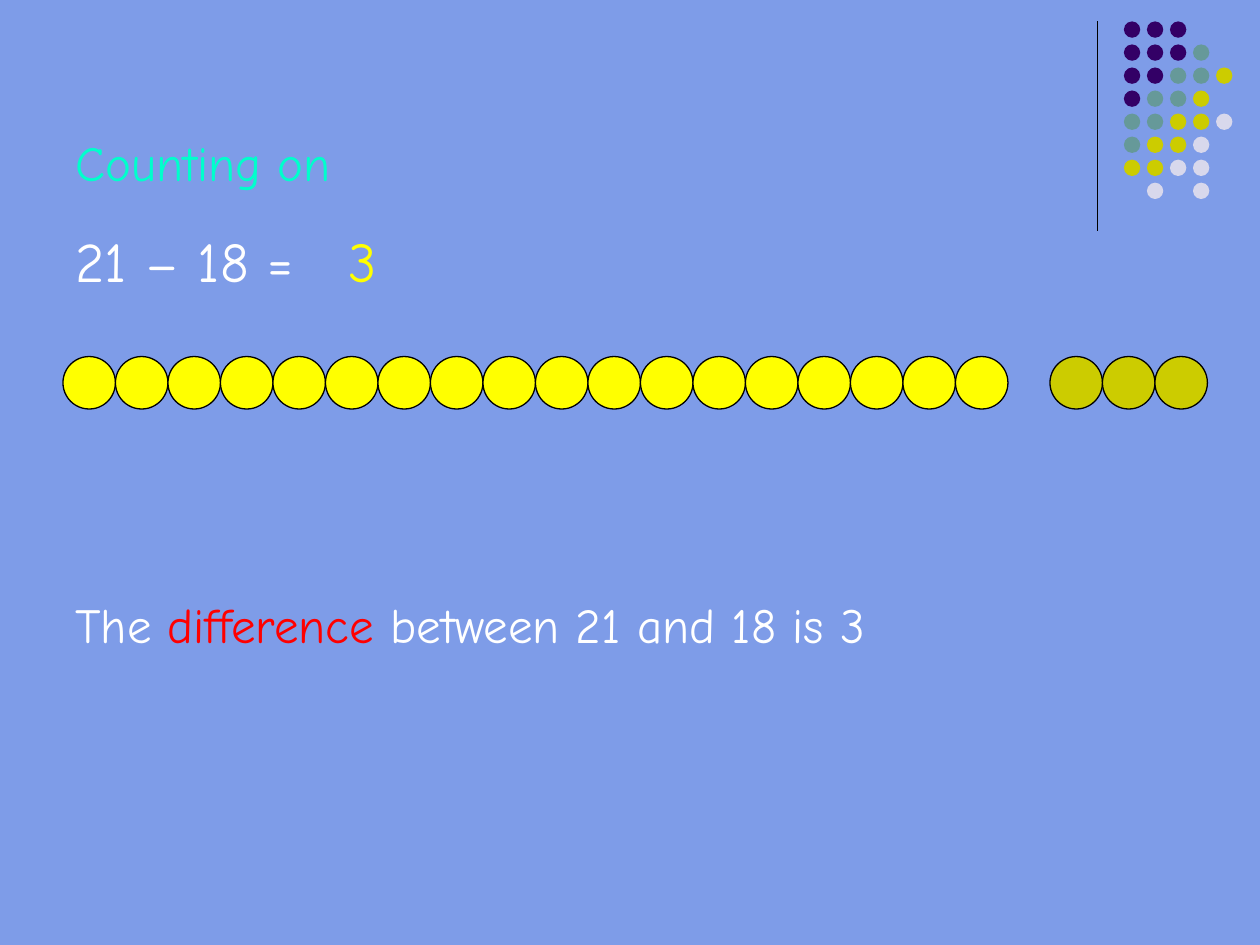
import pptx
import pptx.dml.color
import pptx.enum.shapes
import pptx.enum.text
import pptx.oxml
import pptx.util

RGBColor = pptx.dml.color.RGBColor
BACKGROUND = RGBColor(0x7E, 0x9C, 0xE8)
BLACK = RGBColor(0x00, 0x00, 0x00)
WHITE = RGBColor(0xFF, 0xFF, 0xFF)
YELLOW = RGBColor(0xFF, 0xFF, 0x00)
OLIVE = RGBColor(0xCC, 0xCC, 0x00)
RED = RGBColor(0xFF, 0x00, 0x00)
MINT = RGBColor(0x00, 0xFF, 0xCC)
PURPLE = RGBColor(0x33, 0x00, 0x66)
TEAL = RGBColor(0x66, 0x99, 0x99)
PALE = RGBColor(0xD8, 0xD8, 0xEC)

FONT = "Comic Neue"
WIDTH, HEIGHT = 10, 7.5
MARGIN = WIDTH / 20

# Text runs, then left, top, width, height in inches and size in points
HEADING = ([("Counting on", MINT)], (MARGIN, 1, 3.33, 0.57), 28)
STATEMENTS = [
    ([("21 – 18 =", WHITE)], (MARGIN, 1.75, 3.25, 1.43), 32),
    ([("The ", WHITE), ("difference", RED), (" between 21 and 18 is 3", WHITE)],
     (MARGIN, 4.67, 8.83, 0.57), 28),
    ([("3", YELLOW)], (2.67, 1.75, 0.92, 0.63), 32),
]

# A bead is one of 24 columns wide: count, left edge, colour
BEAD = WIDTH / 24
BEAD_TOP = 2.83
BEAD_GROUPS = [(18, MARGIN, YELLOW), (3, 20 * BEAD, OLIVE)]

# Corner ornament, one letter a dot
DOT_ROWS = ["PPP", "PPPT", "PPTTO", "PTTO", "TTOOL", "TOOL", "OOLL", " L L"]
DOT_COLOURS = {"P": PURPLE, "T": TEAL, "O": OLIVE, "L": PALE}
DOT = 0.13
DOT_LEFT, DOT_TOP, DOT_BOTTOM = 8.92, 0.17, 1.45
DOT_PITCH = (DOT_BOTTOM - DOT_TOP) / (len(DOT_ROWS) - 1)
RULE_LEFT, RULE_BOTTOM = 8.71, 1.83

FRAME_FORMAT = {
    "word_wrap": True,
    "auto_size": pptx.enum.text.MSO_AUTO_SIZE.NONE,
    "vertical_anchor": pptx.enum.text.MSO_ANCHOR.TOP,
}


def inches(*lengths):
    return [pptx.util.Inches(length) for length in lengths]


def add_circle(slide, left, top, diameter, colour, outlined=False):
    circle = slide.shapes.add_shape(
        pptx.enum.shapes.MSO_SHAPE.OVAL, *inches(left, top, diameter, diameter))
    circle.shadow.inherit = False
    circle.fill.solid()
    circle.fill.fore_color.rgb = colour
    if outlined:
        circle.line.color.rgb = BLACK
        circle.line.width = pptx.util.Pt(0.75)
    else:
        circle.line.fill.background()


def write_text(holder, runs, size):
    frame = holder.text_frame
    for name, value in FRAME_FORMAT.items():
        setattr(frame, name, value)
    paragraph = frame.paragraphs[0]
    paragraph.alignment = pptx.enum.text.PP_ALIGN.LEFT
    for words, colour in runs:
        run = paragraph.add_run()
        run.text = words
        run.font.name = FONT
        run.font.size = pptx.util.Pt(size)
        run.font.color.rgb = colour


def add_ornament(slide):
    rule = slide.shapes.add_connector(
        pptx.enum.shapes.MSO_CONNECTOR.STRAIGHT,
        *inches(RULE_LEFT, DOT_TOP, RULE_LEFT, RULE_BOTTOM))
    rule.line.color.rgb = BLACK
    rule.line.width = pptx.util.Pt(0.75)
    properties = rule._element.spPr
    properties.append(properties.makeelement(pptx.oxml.ns.qn("a:effectLst"), {}))
    for row, letters in enumerate(DOT_ROWS):
        for column, letter in enumerate(letters):
            if letter in DOT_COLOURS:
                add_circle(slide, DOT_LEFT + column * DOT_PITCH,
                           DOT_TOP + row * DOT_PITCH, DOT, DOT_COLOURS[letter])


def main():
    deck = pptx.Presentation()
    deck.slide_width, deck.slide_height = inches(WIDTH, HEIGHT)
    slide = deck.slides.add_slide(deck.slide_layouts.get_by_name("Title Only"))
    slide.background.fill.solid()
    slide.background.fill.fore_color.rgb = BACKGROUND

    add_ornament(slide)
    for count, left, colour in BEAD_GROUPS:
        for index in range(count):
            add_circle(slide, left + index * BEAD, BEAD_TOP, BEAD, colour,
                       outlined=True)

    runs, place, size = HEADING
    heading = slide.shapes.title
    heading.left, heading.top, heading.width, heading.height = inches(*place)
    write_text(heading, runs, size)
    for runs, place, size in STATEMENTS:
        write_text(slide.shapes.add_textbox(*inches(*place)), runs, size)

    deck.save("out.pptx")


if __name__ == "__main__":
    main()
